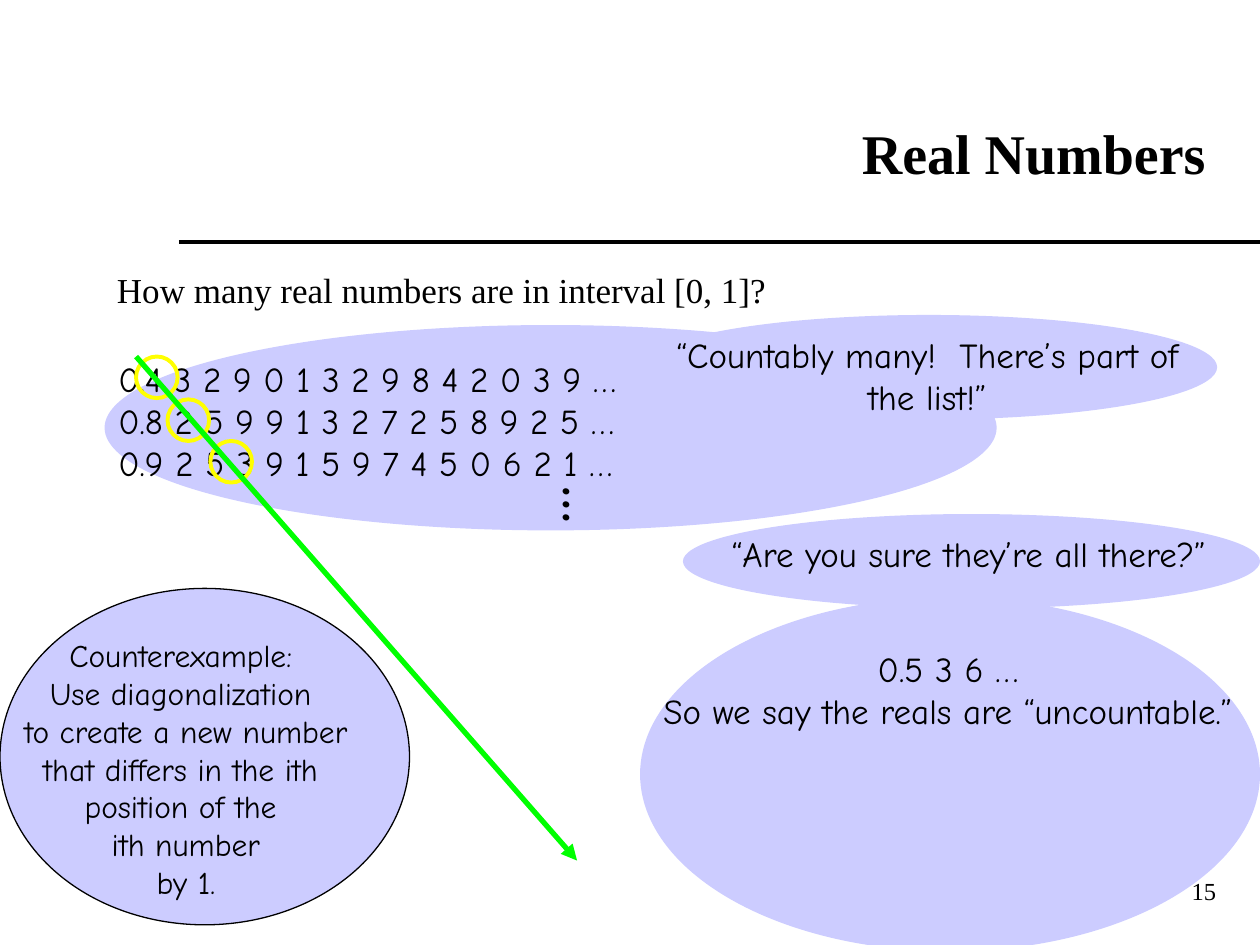
"""Build a slide on the uncountability of the real numbers."""
from lxml.etree import SubElement
from pptx import Presentation
from pptx.dml.color import RGBColor
from pptx.enum.shapes import MSO_CONNECTOR, MSO_SHAPE
from pptx.enum.text import MSO_ANCHOR, PP_ALIGN
from pptx.oxml.ns import qn
from pptx.util import Inches, Pt

SERIF, COMIC = "Times New Roman", "Comic Neue"
BLACK, LAVENDER, YELLOW, GREEN = "000000", "CCCCFF", "FFFF00", "00FF00"

TITLE = "Real Numbers"
QUESTION = "How many real numbers are in interval [0, 1]?"
DECIMALS = [
    "0.4 3 2 9 0 1 3 2 9 8 4 2 0 3 9 …",
    "0.8 2 5 9 9 1 3 2 7 2 5 8 9 2 5 …",
    "0.9 2 5 3 9 1 5 9 7 4 5 0 6 2 1 …",
]
REMARKS = [
    {"ellipse": (5.08, 2.5, 4.58, 0.83), "text": (5.09, 2.6, 4.54, 0.77),
     "lines": ["“Countably many!  There’s part of the list!”"]},
    {"ellipse": (5.42, 4.08, 4.58, 0.75), "text": (5.42, 4.18, 4.54, 0.43),
     "lines": ["“Are you sure they’re all there?”"]},
    {"ellipse": (5.08, 4.74, 4.92, 2.81), "text": (5.09, 5.09, 4.87, 1.1),
     "lines": ["0.5 3 6 …", "So we say the reals are “uncountable.”"]},
]
COUNTEREXAMPLE = [
    "Counterexample: ",
    "Use diagonalization ",
    "to create a new number",
    "that differs in the ith ",
    "position of the ",
    "ith number",
    "by 1.",
]
DIAGONAL_DIGITS = [(1.08, 2.83), (1.33, 3.17), (1.67, 3.5)]


def color(value):
    return RGBColor.from_string(value)


def add_text(slide, box, lines, size=20, font=COMIC, bold=False, align=PP_ALIGN.LEFT,
             anchor=MSO_ANCHOR.TOP, wrap=True, bottom=0.05, rotation=0):
    shape = slide.shapes.add_textbox(*map(Inches, box))
    shape.rotation = rotation
    frame = shape.text_frame
    frame.word_wrap = wrap
    frame.vertical_anchor = anchor
    frame.margin_bottom = Inches(bottom)
    frame.text = "\n".join(lines)
    for paragraph in frame.paragraphs:
        paragraph.alignment = align
        run_font = paragraph.runs[0].font
        run_font.name, run_font.size, run_font.bold = font, Pt(size), bold
        run_font.color.rgb = color(BLACK)


def add_ellipse(slide, box, fill=None, line=None, width=0.75):
    shape = slide.shapes.add_shape(MSO_SHAPE.OVAL, *map(Inches, box))
    shape.shadow.inherit = False
    if fill:
        shape.fill.solid()
        shape.fill.fore_color.rgb = color(fill)
    else:
        shape.fill.background()
    if line:
        shape.line.color.rgb = color(line)
        shape.line.width = Pt(width)
    else:
        shape.line.fill.background()


def add_line(slide, start, end, line, width, arrow=False):
    connector = slide.shapes.add_connector(MSO_CONNECTOR.STRAIGHT, *map(Inches, start + end))
    connector.line.color.rgb = color(line)
    connector.line.width = Pt(width)
    if arrow:
        SubElement(connector.line._get_or_add_ln(), qn("a:tailEnd"), type="triangle")
    SubElement(connector._element.spPr, qn("a:effectLst"))


def main():
    presentation = Presentation()
    presentation.slide_width, presentation.slide_height = Inches(10), Inches(7.5)
    slide = presentation.slides.add_slide(presentation.slide_layouts[6])

    add_line(slide, (1.42, 1.92), (10, 1.92), BLACK, 2.25)
    add_text(slide, (7.42, 6.9, 2.33, 0.52), ["15"], size=14, font=SERIF, align=PP_ALIGN.RIGHT)
    add_text(slide, (1.17, 0.33, 8.5, 1.25), [TITLE], size=32, font=SERIF, bold=True,
             align=PP_ALIGN.RIGHT, anchor=MSO_ANCHOR.BOTTOM, bottom=0.11)
    add_text(slide, (0.83, 2.08, 8.33, 0.45), [QUESTION], font=SERIF)

    add_ellipse(slide, (0.83, 2.58, 7.08, 1.63), fill=LAVENDER)
    add_text(slide, (0.84, 2.79, 7.01, 1.26), DECIMALS)
    add_text(slide, (4.08, 3.59, 0.61, 0.72), ["…"], size=32, bold=True, rotation=270)

    for remark in REMARKS:
        add_ellipse(slide, remark["ellipse"], fill=LAVENDER)
        add_text(slide, remark["text"], remark["lines"], align=PP_ALIGN.CENTER)

    for left, top in DIAGONAL_DIGITS:
        add_ellipse(slide, (left, top, 0.33, 0.33), line=YELLOW, width=2.25)
    add_line(slide, (1.08, 2.83), (4.58, 6.83), GREEN, 3, arrow=True)

    add_ellipse(slide, (0, 4.67, 3.25, 2.67), fill=LAVENDER, line=BLACK)
    add_text(slide, (0, 5, 2.95, 2.2), COUNTEREXAMPLE, size=18, align=PP_ALIGN.CENTER, wrap=False)

    presentation.save("out.pptx")


if __name__ == "__main__":
    main()
